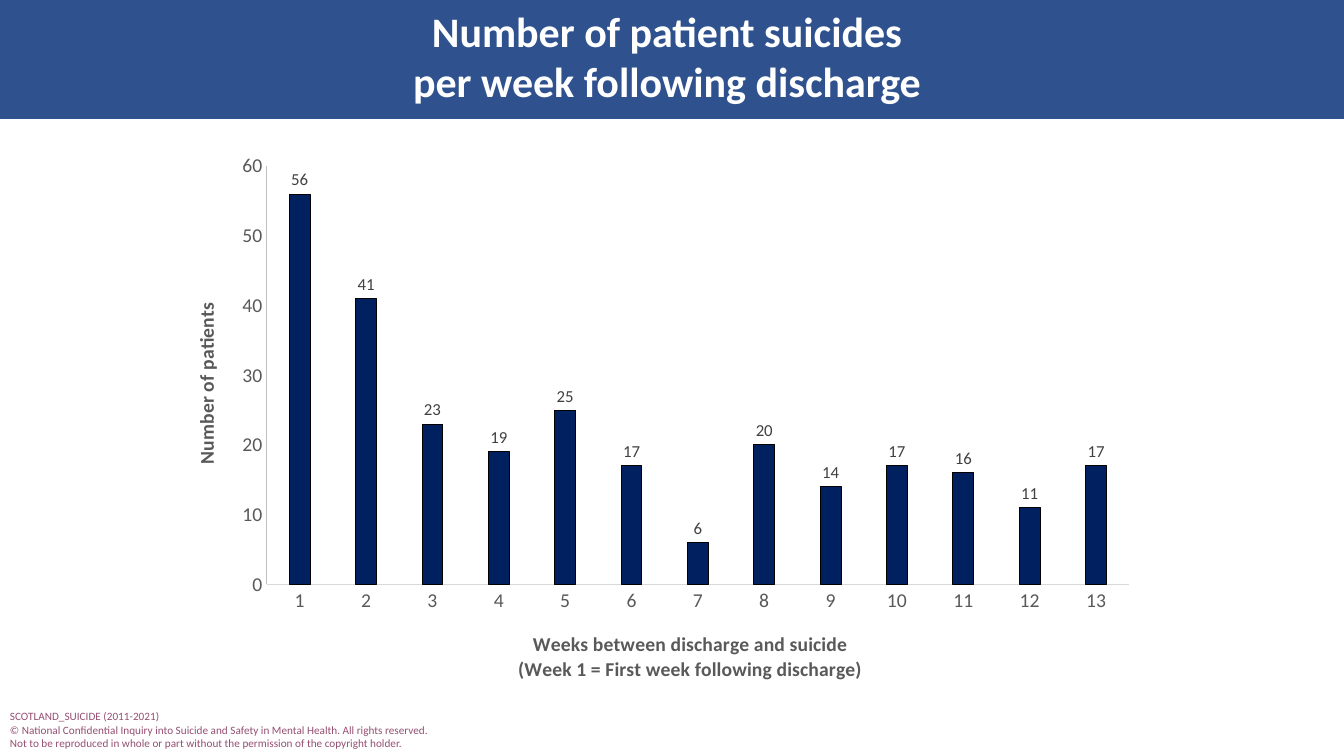
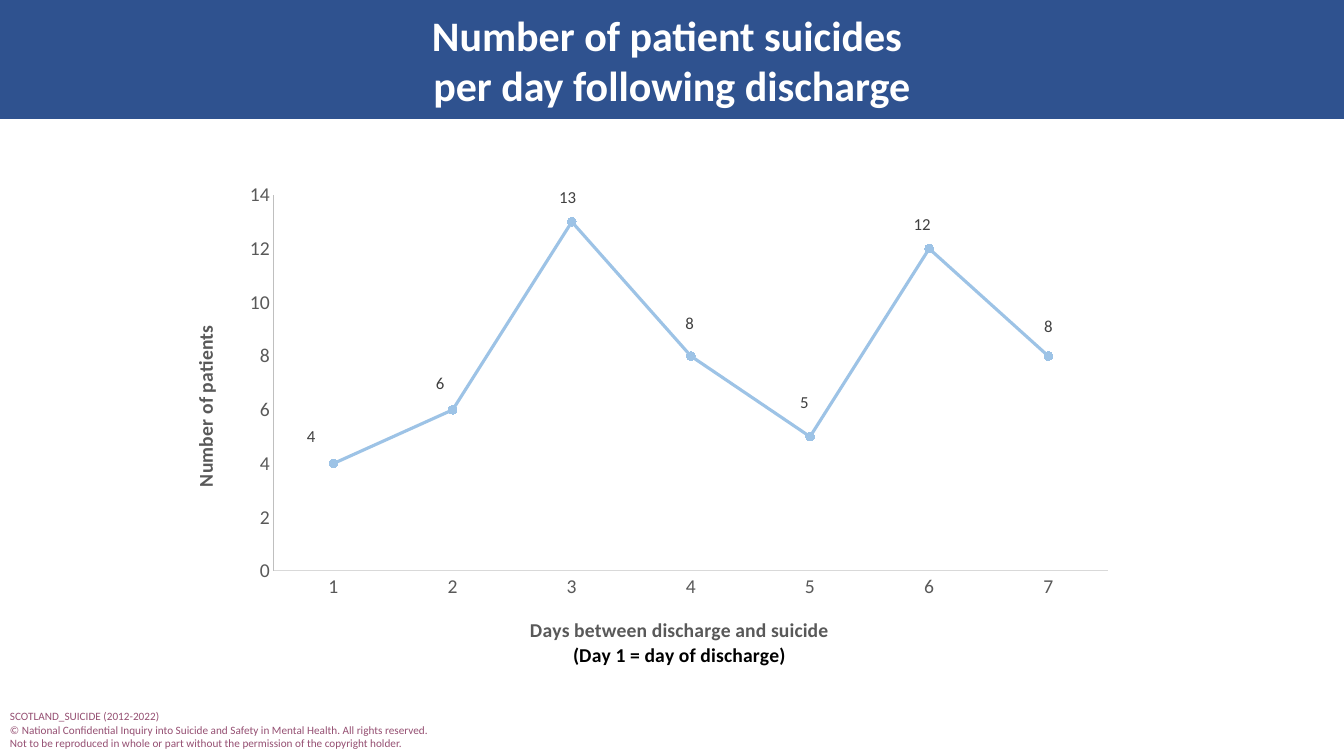
from dataclasses import dataclass

from lxml.etree import Element, SubElement
from pptx import Presentation
from pptx.chart.data import CategoryChartData
from pptx.dml.color import RGBColor
from pptx.enum.chart import XL_CHART_TYPE, XL_LABEL_POSITION, XL_MARKER_STYLE, XL_TICK_MARK
from pptx.enum.shapes import MSO_SHAPE
from pptx.enum.text import MSO_ANCHOR, MSO_AUTO_SIZE, PP_ALIGN
from pptx.oxml.ns import qn
from pptx.util import Pt


@dataclass(frozen=True)
class Theme:
    font: str = "Calibri"
    band: str = "2F528F"
    white: str = "FFFFFF"
    black: str = "000000"
    footer: str = "954F72"
    axis_text: str = "595959"
    label_text: str = "404040"
    category_line: str = "D9D9D9"
    value_line: str = "BFBFBF"
    bar: str = "002060"
    trend: str = "9DC3E6"
    title_size: int = 30
    axis_size: int = 14
    label_size: int = 12
    chart_size: int = 10
    footer_size: int = 8
    thin: float = 0.75
    thick: float = 2.25


THEME = Theme()
WIDTH, HEIGHT, BAND_HEIGHT = 960, 540, 85

TITLE_FORMAT = {"size": THEME.title_size, "color": THEME.white, "bold": True}
FOOTER_FORMAT = {"size": THEME.footer_size, "color": THEME.footer}
CHART_FORMAT = {"size": THEME.chart_size, "color": THEME.black}
TICK_FORMAT = {"size": THEME.axis_size, "color": THEME.axis_text}
AXIS_TITLE_FORMAT = TICK_FORMAT | {"bold": True}
LABEL_FORMAT = {"size": THEME.label_size, "color": THEME.label_text}

RIGHTS = [
    "© National Confidential Inquiry into Suicide and Safety in Mental Health. All rights reserved.",
    "Not to be reproduced in whole or part without the permission of the copyright holder.",
]
VALUE_TITLE = [("Number of patients", THEME.axis_text)]

PAGES = [
    {
        "title": ["Number of patient suicides ", "per week following discharge "],
        "title_box": (0, 18.7, WIDTH, 42),
        "source": "SCOTLAND_SUICIDE (2011-2021)",
        "kind": XL_CHART_TYPE.COLUMN_CLUSTERED,
        "values": [56, 41, 23, 19, 25, 17, 6, 20, 14, 17, 16, 11, 17],
        "scale": (60, 10),
        "category_title": [
            ("Weeks between discharge and suicide", THEME.axis_text),
            ("(Week 1 = First week following discharge)", THEME.axis_text),
        ],
        "chart_box": (122.4, 105.1, 694.8, 388),
        "plot_box": (68, 13.6, 616.3, 298.8),
        "category_title_at": (245.5, 343.5),
        "value_title_at": (12.6, 108.5),
    },
    {
        "title": ["Number of patient suicides ", "per day following discharge"],
        "title_box": (0, 20.2, WIDTH, 44.6),
        "source": "SCOTLAND_SUICIDE (2012-2022)",
        "kind": XL_CHART_TYPE.LINE_MARKERS,
        "values": [4, 6, 13, 8, 5, 12, 8],
        "scale": (14, 2),
        "category_title": [
            ("Days between discharge and suicide", THEME.axis_text),
            ("(Day 1 = day of discharge)", THEME.black),
        ],
        "chart_box": (126, 123.8, 678.2, 365.8),
        "plot_box": (69.7, 15.5, 595.7, 268.6),
        "category_title_at": (250.4, 314.8),
        "value_title_at": (8.3, 106),
        "label_shifts": [(-16, -6), (-9, -6), (-3, -4), (-1, -10), (-4, -11), (-5, -4), (0, -8)],
    },
]


def format_font(font, values):
    font.name = THEME.font
    for name, value in values.items():
        if name == "color":
            font.color.rgb = RGBColor.from_string(value)
        else:
            setattr(font, name, Pt(value) if name == "size" else value)


def paint(fill, color):
    fill.solid()
    fill.fore_color.rgb = RGBColor.from_string(color)


def draw_line(line, color, width):
    paint(line.fill, color)
    line.width = Pt(width)


def write_lines(frame, lines, values, align=None):
    for index, text in enumerate(lines):
        para = frame.paragraphs[0] if index == 0 else frame.add_paragraph()
        para.alignment = align
        span = para.add_run()
        span.text = text
        format_font(span.font, values)


def set_box(shape, box):
    for name, value in zip(("left", "top", "width", "height"), box):
        setattr(shape, name, Pt(value))


def place(parent, index, box, frame_size, mode="edge", target=None):
    for old in parent.findall(qn("c:layout")):
        parent.remove(old)
    layout = Element(qn("c:layout"))
    parent.insert(index, layout)
    manual = SubElement(layout, qn("c:manualLayout"))
    settings = [("layoutTarget", target)] if target else []
    if mode == "edge":
        settings += [("xMode", mode), ("yMode", mode)]
    sizes = frame_size * 2
    settings += [(name, value / size) for name, value, size in zip("xywh", box, sizes)]
    for name, value in settings:
        SubElement(manual, qn(f"c:{name}")).set("val", str(value))


def style_axis(axis, line_color, lines, corner, frame_size):
    axis.has_major_gridlines = False
    axis.major_tick_mark = axis.minor_tick_mark = XL_TICK_MARK.NONE
    format_font(axis.tick_labels.font, TICK_FORMAT)
    draw_line(axis.format.line, line_color, THEME.thin)
    title = axis.axis_title
    frame = title.text_frame
    write_lines(frame, [text for text, _ in lines], AXIS_TITLE_FORMAT, PP_ALIGN.CENTER)
    for para, (_, color) in zip(frame.paragraphs, lines):
        para.runs[0].font.color.rgb = RGBColor.from_string(color)
    place(title.element, 1, corner, frame_size)
    return title


def style_bars(plot, series):
    plot.gap_width, plot.overlap = 219, -2
    paint(series.format.fill, THEME.bar)
    draw_line(series.format.line, THEME.black, THEME.thin)
    series.data_labels.position = XL_LABEL_POSITION.OUTSIDE_END


def style_trend(chart, series, shifts, frame_size):
    series.smooth = False
    draw_line(series.format.line, THEME.trend, THEME.thick)
    marker = series.marker
    marker.style, marker.size = XL_MARKER_STYLE.CIRCLE, 6
    paint(marker.format.fill, THEME.trend)
    draw_line(marker.format.line, THEME.trend, THEME.thin)
    for index in range(len(shifts)):
        label = series.points[index].data_label
        format_font(label.font, LABEL_FORMAT)
        label.position = XL_LABEL_POSITION.ABOVE
    for label, shift in zip(chart.element.xpath(".//c:dLbl"), shifts):
        place(label, 1, shift, frame_size, mode="factor")


def add_page_chart(slide, page):
    data = CategoryChartData()
    data.categories = [str(number) for number in range(1, len(page["values"]) + 1)]
    data.add_series("Series 1", page["values"])
    box = [Pt(value) for value in page["chart_box"]]
    chart = slide.shapes.add_chart(page["kind"], *box, data).chart
    frame_size = page["chart_box"][2:]
    chart.has_legend = chart.has_title = False
    format_font(chart.font, CHART_FORMAT)
    place(chart.element.xpath(".//c:plotArea")[0], 0, page["plot_box"], frame_size, target="inner")

    style_axis(chart.category_axis, THEME.category_line, page["category_title"],
               page["category_title_at"], frame_size)
    value_title = style_axis(chart.value_axis, THEME.value_line, VALUE_TITLE,
                             page["value_title_at"], frame_size)
    body = value_title.element.xpath(".//a:bodyPr")[0]
    body.set("rot", "-5400000")
    body.set("vert", "horz")
    chart.value_axis.minimum_scale = 0
    chart.value_axis.maximum_scale, chart.value_axis.major_unit = page["scale"]

    plot = chart.plots[0]
    plot.vary_by_categories = False
    series = plot.series[0]
    series.data_labels.show_value = True
    format_font(series.data_labels.font, LABEL_FORMAT)
    if page["kind"] == XL_CHART_TYPE.COLUMN_CLUSTERED:
        style_bars(plot, series)
    else:
        style_trend(chart, series, page["label_shifts"], frame_size)
    for leader in chart.element.xpath(".//c:showLeaderLines"):
        leader.set("val", "0")


def add_band(layout, slide):
    band = slide.shapes.add_shape(MSO_SHAPE.RECTANGLE, 0, 0, Pt(WIDTH), Pt(BAND_HEIGHT))
    band.shadow.inherit = False
    paint(band.fill, THEME.band)
    band.line.fill.background()
    layout.shapes.element.insert(2, band.element)


def add_page(slide, page):
    title = slide.shapes.title
    set_box(title, page["title_box"])
    frame = title.text_frame
    frame.auto_size = MSO_AUTO_SIZE.NONE
    frame.vertical_anchor = MSO_ANCHOR.MIDDLE
    write_lines(frame, page["title"], TITLE_FORMAT, PP_ALIGN.CENTER)

    add_page_chart(slide, page)

    footer = slide.shapes.add_textbox(0, Pt(503.3), Pt(317), Pt(36.7)).text_frame
    footer.word_wrap = False
    footer.auto_size = MSO_AUTO_SIZE.SHAPE_TO_FIT_TEXT
    write_lines(footer, [page["source"], *RIGHTS], FOOTER_FORMAT)


def main():
    deck = Presentation()
    deck.slide_width, deck.slide_height = Pt(WIDTH), Pt(HEIGHT)
    layout = deck.slide_layouts[5]
    slides = [deck.slides.add_slide(layout) for _ in PAGES]
    add_band(layout, slides[0])
    for slide, page in zip(slides, PAGES):
        add_page(slide, page)
    deck.save("out.pptx")


if __name__ == "__main__":
    main()
